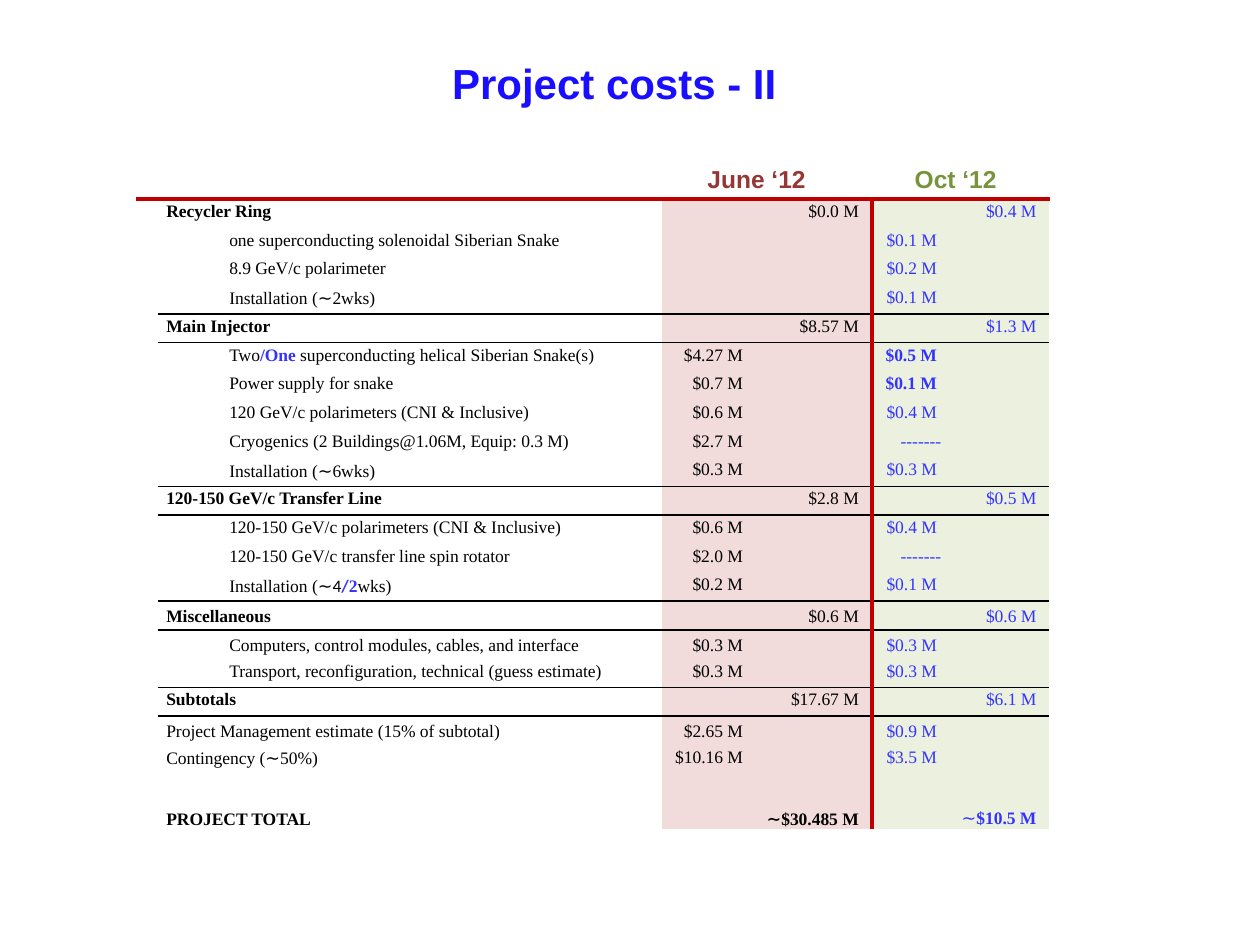
"""Build the "Project costs - II" slide: a two-estimate cost table with ruled sections."""
from lxml import etree
from pptx import Presentation
from pptx import util as u
from pptx.dml.color import RGBColor
from pptx.enum import shapes, text
from pptx.oxml.ns import qn

COLORS = {"title": "190EFF", "june": "953735", "oct": "77933C", "ink": "000000",
          "blue": "3333FF", "pink": "F2DCDB", "green": "EBF1DE", "rule": "C00000"}
SERIF, SANS, SYMBOL = "Times New Roman", "Arial", "Calibri"
NO_GRID_STYLE = "{2D5ABB26-0587-4C30-8999-92F81FD0307C}"
TILDE = ("∼", {"font": SYMBOL})
BLUE_BOLD = {"color": "blue", "bold": True}
BOLD = {"bold": True}

TITLE = "Project costs - II"
HEADERS = [("June ‘12", "june", 5.42), ("Oct ‘12", "oct", 7)]
SECTIONS = [
    [("Recycler Ring ", "$0.0 M ", "$0.4 M "),
     ("one superconducting solenoidal Siberian Snake ", "", "$0.1 M "),
     ("8.9 GeV/c polarimeter ", "", "$0.2 M "),
     (["Installation (", TILDE, "2wks) "], "", "$0.1 M ")],
    [("Main Injector ", "$8.57 M ", "$1.3 M "),
     (["Two", ("/One ", BLUE_BOLD), "superconducting helical Siberian Snake(s)"],
      "$4.27 M ", [("$0.5 M ", BOLD)]),
     ("Power supply for snake ", "$0.7 M ", [("$0.1 M ", BOLD)]),
     ("120 GeV/c polarimeters (CNI & Inclusive) ", "$0.6 M ", "$0.4 M "),
     ("Cryogenics (2 Buildings@1.06M, Equip: 0.3 M) ", "$2.7 M ", "-------"),
     (["Installation (", TILDE, "6wks) "], "$0.3 M ", "$0.3 M ")],
    [("120-150 GeV/c Transfer Line ", "$2.8 M ", "$0.5 M "),
     ("120-150 GeV/c polarimeters (CNI & Inclusive) ", "$0.6 M ", "$0.4 M "),
     ("120-150 GeV/c transfer line spin rotator ", "$2.0 M ", "-------"),
     (["Installation (", ("∼4", {"font": SYMBOL}), ("/", {**BLUE_BOLD, "font": SYMBOL}),
       ("2", BLUE_BOLD), "wks) "], "$0.2 M ", "$0.1 M ")],
    [("Miscellaneous ", "$0.6 M ", "$0.6 M "),
     ("Computers, control modules, cables, and interface ", "$0.3 M ", "$0.3 M "),
     ("Transport, reconfiguration, technical (guess estimate) ", "$0.3 M ", "$0.3 M ")],
    [("Subtotals ", "$17.67 M ", "$6.1 M "),
     ("Project Management estimate (15% of subtotal) ", "$2.65 M ", "$0.9 M "),
     (["Contingency (", TILDE, "50%) "], "$10.16 M ", "$3.5 M "),
     ("PROJECT TOTAL ", [("∼$30.485 M ", BOLD)],
      [("∼", {"font": SYMBOL}), ("$10.5 M ", BOLD)])],
]
COLUMNS = [4, 0.75, 0.92, 0.62, 0.79]
FILLS = [None, "pink", "pink", "green", "green"]
TABLE_LEFT, TABLE_TOP, TABLE_HEIGHT, LAST_ROW = 1.25, 1.58, 5, 0.44
MIDDLE_ROWS = {14, 15, 18}
TABLE_RIGHT = TABLE_LEFT + sum(COLUMNS)
TABLE_BOTTOM = TABLE_TOP + TABLE_HEIGHT
DIVIDER = TABLE_LEFT + sum(COLUMNS[:3])


def write(frame, content, size=10, font=SERIF, color="ink", bold=False,
          align=text.PP_ALIGN.LEFT, spacing=None, indent=0):
    """Fill the first paragraph with plain text or a list of runs with overrides."""
    paragraph = frame.paragraphs[0]
    paragraph.alignment, paragraph.line_spacing = align, spacing
    if indent:
        properties = paragraph._p.get_or_add_pPr()
        properties.set("marL", str(u.Inches(indent)))
        properties.set("indent", "0")
    if not content:
        paragraph._p.get_or_add_endParaRPr().set("sz", str(size * 100))
        return
    for part in [content] if isinstance(content, str) else content:
        words, changes = (part, {}) if isinstance(part, str) else part
        look = {"font": font, "color": color, "bold": bold, **changes}
        run = paragraph.add_run()
        run.text = words
        run.font.size, run.font.name, run.font.bold = u.Pt(size), look["font"], look["bold"]
        run.font.color.rgb = RGBColor.from_string(COLORS[look["color"]])


def add_label(slide, content, left, top, width, height, **look):
    """Add a centred bold heading."""
    frame = slide.shapes.add_textbox(*map(u.Inches, (left, top, width, height))).text_frame
    frame.word_wrap = True
    frame.vertical_anchor = text.MSO_ANCHOR.MIDDLE
    write(frame, content, font=SANS, bold=True, align=text.PP_ALIGN.CENTER, **look)


def add_border(cell, side):
    """Draw a one-point black border on one side, ahead of the cell's fill."""
    properties = cell._tc.get_or_add_tcPr()
    border = etree.Element(qn(f"a:{side}"), w=str(u.Pt(1)))
    fill = etree.SubElement(border, qn("a:solidFill"))
    etree.SubElement(fill, qn("a:srgbClr"), val=COLORS["ink"])
    properties.insert(0, border)


def add_rule(slide, *ends):
    """Draw a red straight rule."""
    line = slide.shapes.add_connector(shapes.MSO_CONNECTOR.STRAIGHT, *map(u.Inches, ends))
    line.line.color.rgb = RGBColor.from_string(COLORS["rule"])
    line.line.width = u.Pt(2)
    etree.SubElement(line._element.spPr, qn("a:effectLst"))


def add_costs(slide):
    """Add the cost table: section totals in the outer columns, items in the inner ones."""
    count = sum(map(len, SECTIONS))
    frame = slide.shapes.add_table(count, len(COLUMNS), *map(
        u.Inches, (TABLE_LEFT, TABLE_TOP, sum(COLUMNS), TABLE_HEIGHT)))
    table = frame.table
    table.first_row = table.horz_banding = False
    table._tbl.tblPr.find(qn("a:tableStyleId")).text = NO_GRID_STYLE
    for column, width in zip(table.columns, COLUMNS):
        column.width = u.Inches(width)
    heights = [(TABLE_HEIGHT - LAST_ROW) / (count - 1)] * (count - 1) + [LAST_ROW]
    for row, height in zip(table.rows, heights):
        row.height = u.Inches(height)

    index = 0
    for section in SECTIONS:
        for position, (label, june, october) in enumerate(section):
            first, last = position == 0, position == len(section) - 1
            closing = index == count - 1
            total = first or closing
            values = [label, "", june, "", october] if total else [label, june, "", october, ""]
            indent = 0 if total or section is SECTIONS[-1] else 0.5
            for column, value in enumerate(values):
                cell = table.cell(index, column)
                cell.margin_left = cell.margin_right = u.Inches(0.07)
                cell.margin_top = cell.margin_bottom = 0
                cell.vertical_anchor = (text.MSO_ANCHOR.BOTTOM if closing else
                                        text.MSO_ANCHOR.MIDDLE if index in MIDDLE_ROWS else
                                        text.MSO_ANCHOR.TOP)
                if FILLS[column]:
                    cell.fill.solid()
                    cell.fill.fore_color.rgb = RGBColor.from_string(COLORS[FILLS[column]])
                else:
                    cell.fill.background()
                write(cell.text_frame, value, spacing=1.15,
                      color="blue" if column > 2 else "ink",
                      bold=total and column == 0,
                      align=text.PP_ALIGN.RIGHT if column else text.PP_ALIGN.LEFT,
                      indent=0 if column else indent)
                if first:
                    add_border(cell, "lnT")
                if last and not closing:
                    add_border(cell, "lnB")
            index += 1


def main():
    """Assemble and save the slide."""
    presentation = Presentation()
    presentation.slide_width, presentation.slide_height = u.Inches(10), u.Inches(7.5)
    slide = presentation.slides.add_slide(presentation.slide_layouts[6])
    add_label(slide, TITLE, 0.5, 0.4, 8.75, 0.51, size=24, color="title")
    add_costs(slide)
    for header, color, left in HEADERS:
        add_label(slide, header, left, 1.25, 1.17, 0.34, size=14, color=color)
    add_rule(slide, DIVIDER, TABLE_TOP, DIVIDER, TABLE_BOTTOM)
    add_rule(slide, 1.08, TABLE_TOP, TABLE_RIGHT, TABLE_TOP)
    presentation.save("out.pptx")


if __name__ == "__main__":
    main()
